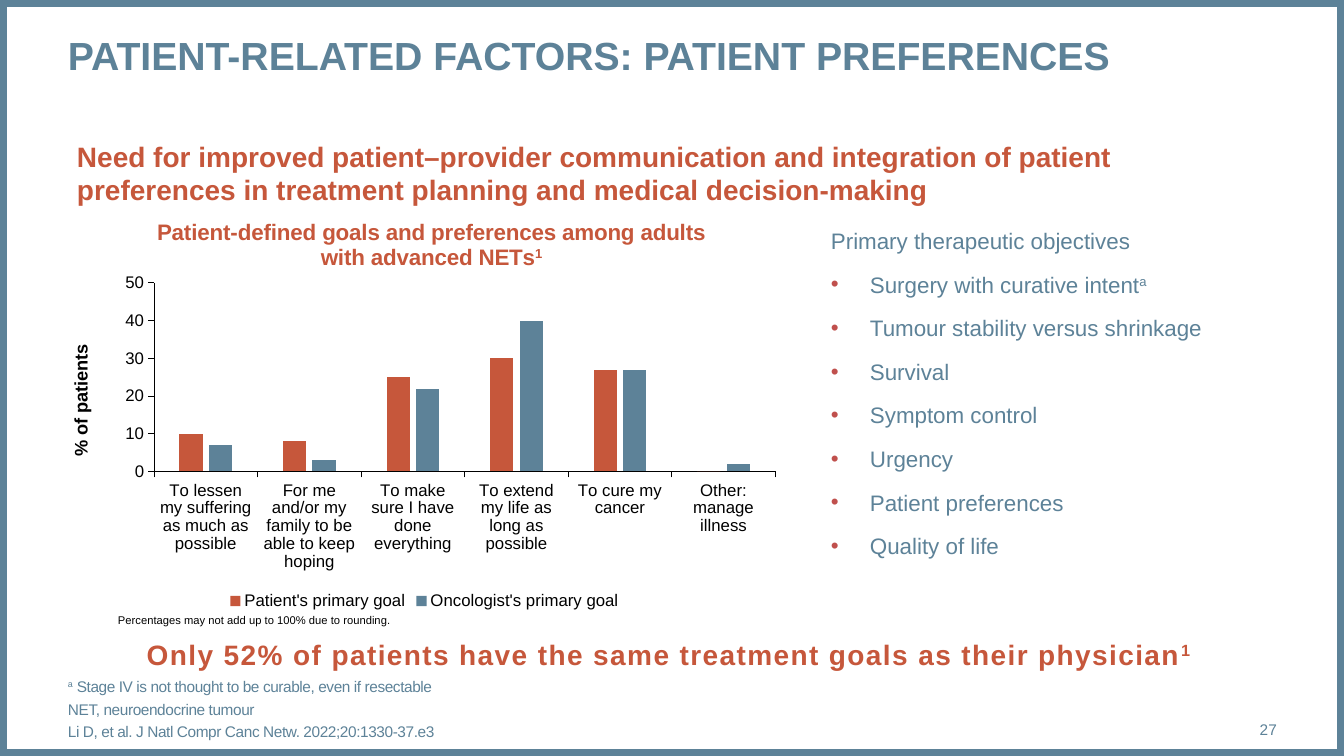
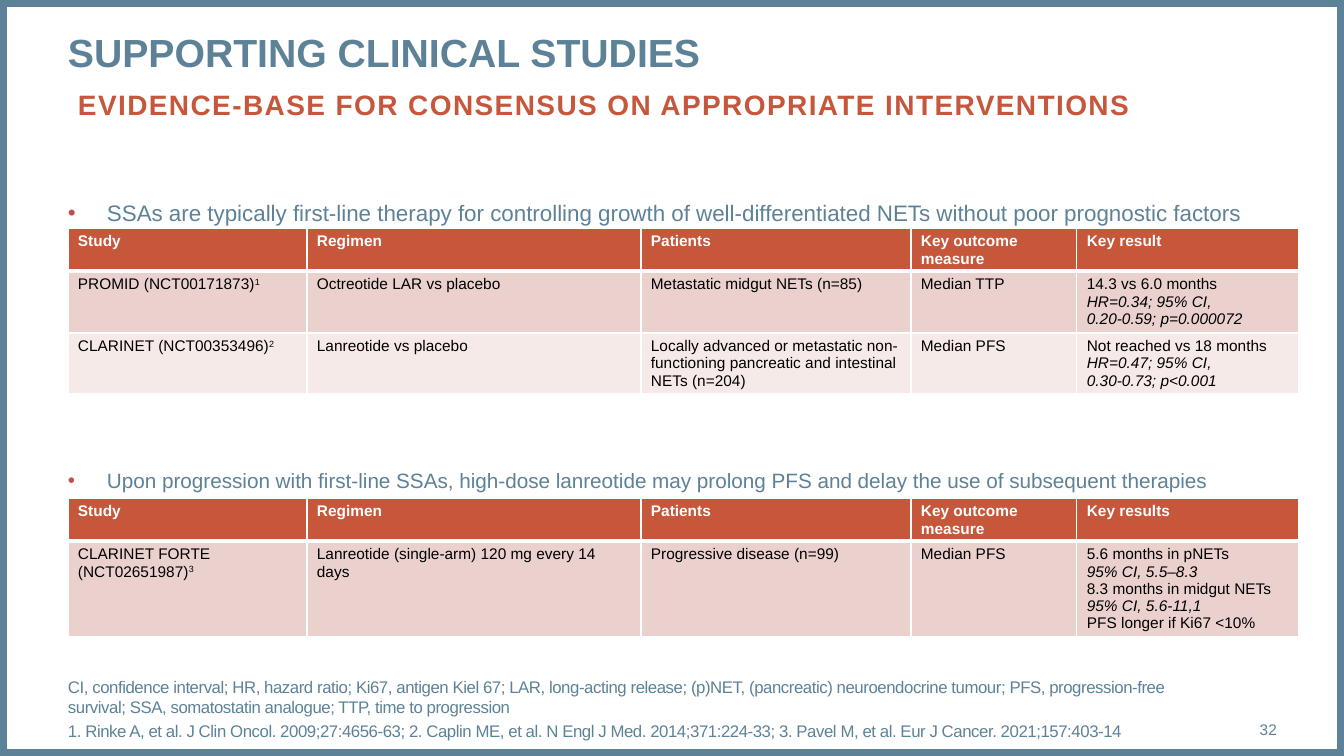
from dataclasses import dataclass
from typing import Any, Sequence

from lxml import etree
from pptx import Presentation
from pptx.chart.data import CategoryChartData
from pptx.dml.color import RGBColor
from pptx.enum.chart import XL_CHART_TYPE, XL_LEGEND_POSITION, XL_TICK_MARK
from pptx.enum.shapes import MSO_SHAPE
from pptx.enum.text import MSO_ANCHOR, MSO_AUTO_SIZE, PP_ALIGN
from pptx.oxml.ns import qn
from pptx.util import Emu, Pt

SLIDE_W, SLIDE_H = 1344, 756
EMU_PER_PX = 12192000 / SLIDE_W
FONT = "Arial"
SLATE, RUST, BULLET_RED = "5D8298", "C6573B", "C0504D"
BLACK, WHITE = "000000", "FFFFFF"
ROW_FILLS = ("EAD1CE", "F5EAE8")
COLUMN_WIDTHS = (239, 334, 270, 166, 222)
BULLET_INDENT = 39
TITLE_ONLY = 5
LEFT, CENTER, RIGHT = PP_ALIGN.LEFT, PP_ALIGN.CENTER, PP_ALIGN.RIGHT
TOP, MIDDLE, BOTTOM = MSO_ANCHOR.TOP, MSO_ANCHOR.MIDDLE, MSO_ANCHOR.BOTTOM
NO_AUTOFIT = MSO_AUTO_SIZE.NONE
CLUSTERED = XL_CHART_TYPE.COLUMN_CLUSTERED
LEGEND_BOTTOM = XL_LEGEND_POSITION.BOTTOM
TICK_OUTSIDE = XL_TICK_MARK.OUTSIDE
RECTANGLE = MSO_SHAPE.RECTANGLE


@dataclass(frozen=True)
class Run:
    text: str
    superscript: bool = False
    italic: bool = False


@dataclass(frozen=True)
class Para:
    runs: tuple[Run, ...]
    bullet: bool = False


@dataclass(frozen=True)
class Box:
    left: int
    top: int
    width: int
    height: int

    def emu(self) -> tuple[Emu, Emu, Emu, Emu]:
        return px(self.left), px(self.top), px(self.width), px(self.height)


@dataclass(frozen=True)
class StudyTable:
    box: Box
    row_heights: tuple[int, ...]
    result_heading: str
    studies: tuple[tuple[tuple[Para, ...], ...], ...]


def px(length: float) -> Emu:
    return Emu(round(length * EMU_PER_PX))


def rgb(value: str) -> RGBColor:
    return RGBColor.from_string(value)


def para(text: str, superscript: str = "", italic: bool = False, bullet: bool = False) -> Para:
    runs = (Run(text, italic=italic),)
    if superscript:
        runs += (Run(superscript, superscript=True),)
    return Para(runs, bullet)


def add_bullet(paragraph: Any) -> None:
    properties = paragraph._p.get_or_add_pPr()
    indent = px(BULLET_INDENT)
    properties.set("marL", str(indent))
    properties.set("indent", str(-indent))
    colour = etree.SubElement(properties, qn("a:buClr"))
    etree.SubElement(colour, qn("a:srgbClr"), val=BULLET_RED)
    etree.SubElement(properties, qn("a:buFont"), typeface=FONT)
    etree.SubElement(properties, qn("a:buChar"), char="•")


def write_text(frame: Any, paragraphs: Sequence[Para], *, size: float, color: str,
               bold: bool = False, align: Any = LEFT, before: float = 0,
               tracking: float = 0) -> None:
    for index, content in enumerate(paragraphs):
        paragraph = frame.paragraphs[0] if index == 0 else frame.add_paragraph()
        paragraph.alignment = align
        paragraph.line_spacing = 1.0
        paragraph.space_before = Pt(before if index else 0)
        if content.bullet:
            add_bullet(paragraph)
        for part in content.runs:
            for line_index, line in enumerate(part.text.split("\n")):
                if line_index:
                    paragraph.add_line_break()
                run = paragraph.add_run()
                run.text = line
                run.font.name = FONT
                run.font.size = Pt(size)
                run.font.bold = bold
                run.font.italic = part.italic
                run.font.color.rgb = rgb(color)
                properties = run._r.get_or_add_rPr()
                if part.superscript:
                    properties.set("baseline", "30000")
                if tracking:
                    properties.set("spc", str(round(tracking * 100)))


def set_frame(frame: Any, anchor: Any = TOP, inset: bool = False) -> None:
    frame.word_wrap = True
    frame.auto_size = NO_AUTOFIT
    frame.vertical_anchor = anchor
    frame.margin_left = frame.margin_right = px(10 if inset else 0)
    frame.margin_top = frame.margin_bottom = px(5 if inset else 0)


def add_text(slide: Any, box: Box, paragraphs: Sequence[Para], *, anchor: Any = TOP,
             inset: bool = False, **text_format: Any) -> None:
    frame = slide.shapes.add_textbox(*box.emu()).text_frame
    set_frame(frame, anchor, inset)
    write_text(frame, paragraphs, **text_format)


def start_slide(prs: Any, title: str, title_top: int, number: str,
                footnotes: Sequence[Para], footnote_size: int) -> Any:
    slide = prs.slides.add_slide(prs.slide_layouts[TITLE_ONLY])
    border = slide.shapes.add_shape(RECTANGLE, *Box(0, 0, SLIDE_W, SLIDE_H).emu())
    border.shadow.inherit = False
    border.fill.background()
    border.line.color.rgb = rgb(SLATE)
    border.line.width = Pt(10)
    heading = slide.shapes.title
    heading.left, heading.top, heading.width, heading.height = Box(68, title_top, 1209, 95).emu()
    set_frame(heading.text_frame)
    write_text(heading.text_frame, [para(title)], size=28, color=SLATE, bold=True)
    add_text(slide, Box(68, 701, 1122, 40), footnotes, anchor=BOTTOM,
             size=footnote_size, color=SLATE, before=3, tracking=-0.3)
    add_text(slide, Box(1190, 709, 87, 40), [para(number)], anchor=MIDDLE,
             size=11, color=SLATE, align=RIGHT)
    return slide


def place_in_chart(parent: Any, position: int, **fractions: float) -> None:
    for old in parent.findall(qn("c:layout")):
        parent.remove(old)
    layout = etree.Element(qn("c:layout"))
    manual = etree.SubElement(layout, qn("c:manualLayout"))
    if "w" in fractions:
        etree.SubElement(manual, qn("c:layoutTarget"), val="inner")
    for mode in ("xMode", "yMode"):
        etree.SubElement(manual, qn(f"c:{mode}"), val="edge")
    for key, value in fractions.items():
        etree.SubElement(manual, qn(f"c:{key}"), val=str(value))
    parent.insert(position, layout)


def add_goals_chart(slide: Any, box: Box) -> None:
    data = CategoryChartData()
    data.categories = [
        "To lessen my suffering as much as possible",
        "For me and/or my family to be able to keep hoping",
        "To make sure I have done everything",
        "To extend my life as long as possible",
        "To cure my cancer",
        "Other: manage illness",
    ]
    data.add_series("Patient's primary goal", (10, 8, 25, 30, 27, 0))
    data.add_series("Oncologist's primary goal", (7, 3, 22, 40, 27, 2))
    chart = slide.shapes.add_chart(CLUSTERED, *box.emu(), data).chart
    chart.font.name, chart.font.size = FONT, Pt(12)
    chart.font.color.rgb = rgb(BLACK)

    chart.has_title = True
    write_text(chart.chart_title.text_frame,
               [para("Patient-defined goals and preferences among adults with advanced NETs", "1")],
               size=16, color=RUST, bold=True, align=CENTER)
    place_in_chart(chart.chart_title.element, 1, x=0.13, y=0.05)
    chart.has_legend = True
    chart.legend.position = LEGEND_BOTTOM
    chart.legend.include_in_layout = False

    plot = chart.plots[0]
    plot.gap_width, plot.overlap, plot.vary_by_categories = 219, -27, False
    for series, color in zip(plot.series, (RUST, SLATE)):
        series.format.fill.solid()
        series.format.fill.fore_color.rgb = rgb(color)
    place_in_chart(chart.element.find(".//" + qn("c:plotArea")), 0, x=0.13, y=0.21, w=0.85, h=0.45)

    percent_axis = chart.value_axis
    percent_axis.minimum_scale, percent_axis.maximum_scale, percent_axis.major_unit = 0, 50, 10
    percent_axis.has_title = True
    write_text(percent_axis.axis_title.text_frame, [para("% of patients")],
               size=13, color=BLACK, bold=True, align=CENTER)
    place_in_chart(percent_axis.axis_title.element, 1, x=0.01, y=0.35)
    for axis in (percent_axis, chart.category_axis):
        axis.has_major_gridlines = False
        axis.major_tick_mark = TICK_OUTSIDE
        axis.tick_labels.font.name = FONT
        axis.tick_labels.font.size = Pt(12)
        axis.tick_labels.font.color.rgb = rgb(BLACK)
        axis.format.line.color.rgb = rgb(BLACK)
        axis.format.line.width = Pt(0.75)


def set_borders(cell: Any, top: int, bottom: int) -> None:
    properties = cell._tc.get_or_add_tcPr()
    for side, width in (("L", 1), ("R", 1), ("T", top), ("B", bottom)):
        line = etree.SubElement(properties, qn(f"a:ln{side}"), w=str(Pt(width)))
        fill = etree.SubElement(line, qn("a:solidFill"))
        etree.SubElement(fill, qn("a:srgbClr"), val=WHITE)


def add_study_table(slide: Any, study_table: StudyTable) -> None:
    headings = ("Study", "Regimen", "Patients", "Key outcome measure", study_table.result_heading)
    rows = (tuple((para(heading),) for heading in headings), *study_table.studies)
    table = slide.shapes.add_table(len(rows), len(headings), *study_table.box.emu()).table
    for column, width in zip(table.columns, COLUMN_WIDTHS):
        column.width = px(width)
    for row_index, contents in enumerate(rows):
        table.rows[row_index].height = px(study_table.row_heights[row_index])
        is_header = row_index == 0
        fill = RUST if is_header else ROW_FILLS[(row_index - 1) % 2]
        for column_index, paragraphs in enumerate(contents):
            cell = table.cell(row_index, column_index)
            set_borders(cell, top=3 if row_index == 1 else 1, bottom=3 if is_header else 1)
            cell.fill.solid()
            cell.fill.fore_color.rgb = rgb(fill)
            cell.margin_left = cell.margin_right = px(10)
            cell.margin_top, cell.margin_bottom = px(5), px(3)
            write_text(cell.text_frame, paragraphs, size=11,
                       color=WHITE if is_header else BLACK, bold=is_header)


def build_preferences(prs: Any) -> None:
    slide = start_slide(
        prs, "PATIENT-RELATED FACTORS: PATIENT PREFERENCES", 31, "27",
        [Para((Run("a", superscript=True),
               Run(" Stage IV is not thought to be curable, even if resectable"))),
         para("NET, neuroendocrine tumour"),
         para("Li D, et al. J Natl Compr Canc Netw. 2022;20:1330-37.e3")], 11)
    add_text(slide, Box(67, 134, 1210, 78),
             [para("Need for improved patient–provider communication and integration of patient "
                   "preferences in treatment planning and medical decision-making")],
             inset=True, size=20, color=RUST, bold=True)
    add_goals_chart(slide, Box(59, 195, 731, 419))
    add_text(slide, Box(108, 608, 659, 24),
             [para("Percentages may not add up to 100% due to rounding.")],
             inset=True, size=8, color=BLACK)
    add_text(slide, Box(62, 637, 1213, 78),
             [para("Only 52% of patients have the same treatment goals as their physician", "1")],
             size=20, color=RUST, bold=True, align=CENTER, tracking=1)
    objectives = ("Tumour stability versus shrinkage", "Survival", "Symptom control",
                  "Urgency", "Patient preferences", "Quality of life")
    add_text(slide, Box(821, 222, 456, 400),
             [para("Primary therapeutic objectives"),
              para("Surgery with curative intent", "a", bullet=True),
              *(para(objective, bullet=True) for objective in objectives)],
             inset=True, size=16, color=SLATE, before=12)


def build_studies(prs: Any) -> None:
    slide = start_slide(
        prs, "SUPPORTING CLINICAL STUDIES", 28, "32",
        [para("CI, confidence interval; HR, hazard ratio; Ki67, antigen Kiel 67; LAR, long-acting "
              "release; (p)NET, (pancreatic) neuroendocrine tumour; PFS, progression-free survival; "
              "SSA, somatostatin analogue; TTP, time to progression"),
         para("1. Rinke A, et al. J Clin Oncol. 2009;27:4656-63; 2. Caplin ME, et al. N Engl J Med. "
              "2014;371:224-33; 3. Pavel M, et al. Eur J Cancer. 2021;157:403-14")], 12)
    add_text(slide, Box(68, 83, 1210, 78),
             [para("EVIDENCE-BASE FOR CONSENSUS ON APPROPRIATE INTERVENTIONS")],
             inset=True, size=20, color="C7573C", bold=True, tracking=1)
    statements = (
        (199, 16, "SSAs are typically first-line therapy for controlling growth of "
                  "well-differentiated NETs without poor prognostic factors"),
        (468, 14.8, "Upon progression with first-line SSAs, high-dose lanreotide may prolong PFS "
                    "and delay the use of subsequent therapies"),
    )
    for top, size, statement in statements:
        add_text(slide, Box(68, top, 1209, 45), [para(statement, bullet=True)],
                 size=size, color=SLATE)
    first_line = (
        ((para("PROMID (NCT00171873)", "1"),), (para("Octreotide LAR vs placebo"),),
         (para("Metastatic midgut NETs (n=85)"),), (para("Median TTP"),),
         (para("14.3 vs 6.0 months"),
          para("HR=0.34; 95% CI,\n0.20-0.59; p=0.000072", italic=True))),
        ((para("CLARINET (NCT00353496)", "2"),), (para("Lanreotide vs placebo"),),
         (para("Locally advanced or metastatic non-functioning pancreatic and intestinal "
               "NETs (n=204)"),), (para("Median PFS"),),
         (para("Not reached vs 18 months"),
          para("HR=0.47; 95% CI,\n0.30-0.73; p<0.001", italic=True))),
    )
    after_progression = (
        ((para("CLARINET FORTE (NCT02651987)", "3"),),
         (para("Lanreotide (single-arm) 120 mg every 14 days"),),
         (para("Progressive disease (n=99)"),), (para("Median PFS"),),
         (para("5.6 months in pNETs"), para("95% CI, 5.5–8.3", italic=True),
          para("8.3 months in midgut NETs"), para("95% CI, 5.6-11,1", italic=True),
          para("PFS longer if Ki67 <10%"))),
    )
    for study_table in (
        StudyTable(Box(68, 228, 1231, 166), (43, 62, 61), "Key result", first_line),
        StudyTable(Box(68, 498, 1231, 139), (43, 96), "Key results", after_progression),
    ):
        add_study_table(slide, study_table)


def main() -> None:
    prs = Presentation()
    prs.slide_width, prs.slide_height = px(SLIDE_W), px(SLIDE_H)
    build_preferences(prs)
    build_studies(prs)
    prs.save("out.pptx")


if __name__ == "__main__":
    main()
